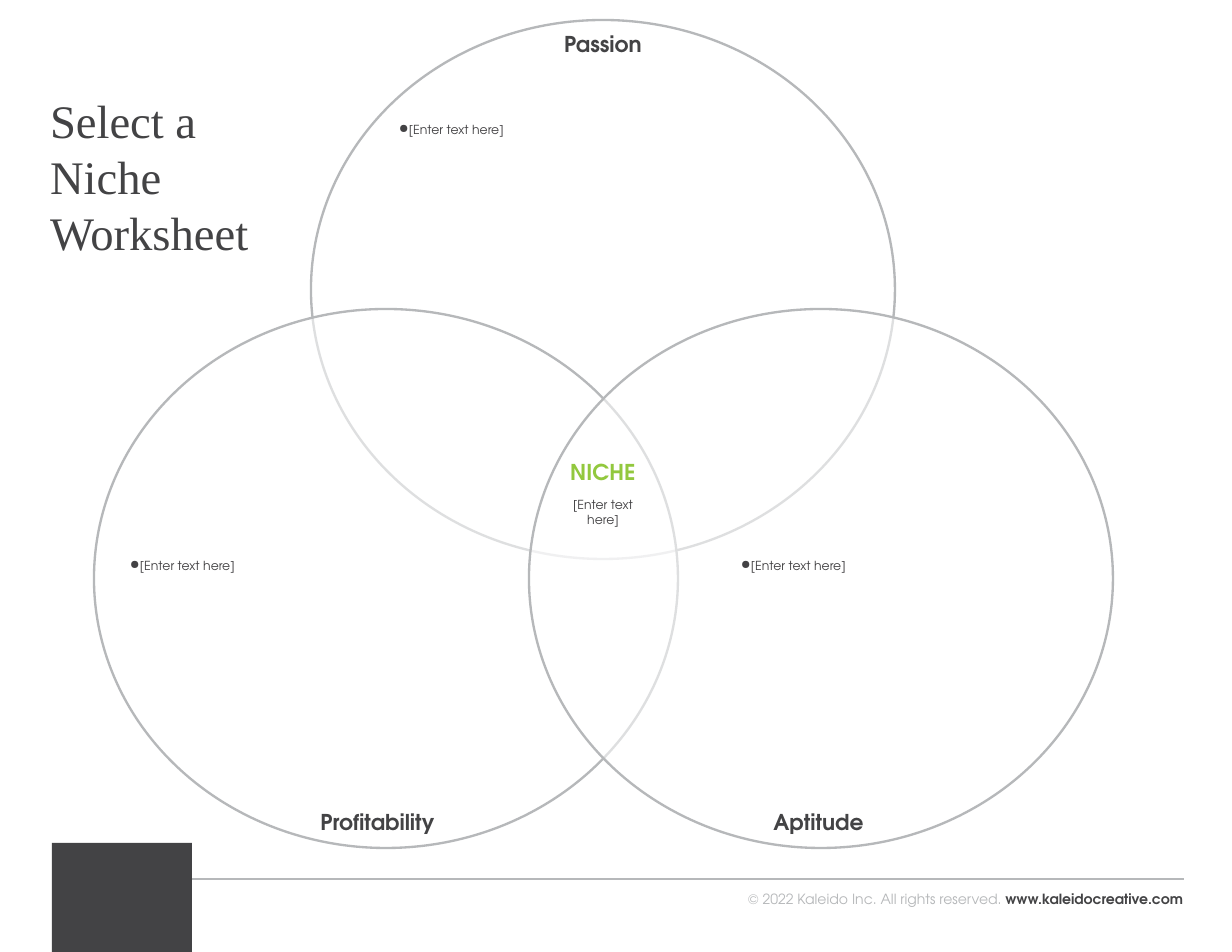
from collections import namedtuple
from dataclasses import dataclass

from lxml import etree
from pptx import Presentation
from pptx.dml.color import RGBColor
from pptx.enum.shapes import MSO_CONNECTOR as Connector, MSO_SHAPE as Preset
from pptx.enum.text import MSO_ANCHOR as Anchor, MSO_AUTO_SIZE as AutoSize, PP_ALIGN as Align
from pptx.oxml.ns import qn
from pptx.util import Emu, Pt

Box = namedtuple("Box", "left top width height")
Circle = namedtuple("Circle", "name box label note")


@dataclass(frozen=True)
class Theme:
    dark: str = "434345"
    body: str = "434244"
    grey: str = "B6B8BA"
    green: str = "92C83E"
    white: str = "FFFFFF"
    sans: str = "TeX Gyre Adventor"
    serif: str = "Times New Roman"
    title_size: int = 30
    label_size: int = 14
    footer_size: int = 9
    note_size: int = 8


THEME = Theme()
PLACEHOLDER_TEXT = "[Enter text here]"
CIRCLE_WIDTH, CIRCLE_HEIGHT = 584, 539
CIRCLES = [
    Circle("Passion", Box(311, 20, CIRCLE_WIDTH, CIRCLE_HEIGHT),
           Box(231, -11, 122, 69), Box(77, 95, 431, 38)),
    Circle("Profitability", Box(94, 309, CIRCLE_WIDTH, CIRCLE_HEIGHT),
           Box(195, 478, 177, 69), Box(25, 242, 356, 38)),
    Circle("Aptitude", Box(529, 309, CIRCLE_WIDTH, CIRCLE_HEIGHT),
           Box(206, 478, 167, 69), Box(201, 242, 356, 38)),
]


def px(value):
    return Emu(round(value * 914400 / 112))


def place(box):
    return [px(value) for value in box]


def inside(outer, inner):
    return inner._replace(left=outer.left + inner.left, top=outer.top + inner.top)


def color(value):
    return RGBColor.from_string(value)


def set_font(font, size, value, name=THEME.sans, bold=False):
    font.name, font.size, font.bold = name, Pt(size), bold
    font.color.rgb = color(value)


def set_frame(frame, margins, anchor=Anchor.TOP):
    frame.word_wrap = True
    frame.auto_size = AutoSize.NONE
    frame.vertical_anchor = anchor
    (frame.margin_left, frame.margin_top,
     frame.margin_right, frame.margin_bottom) = place(margins)


def add_text(slide, box, text, size, value, bold=False, align=Align.CENTER, anchor=Anchor.TOP):
    frame = slide.shapes.add_textbox(*place(box)).text_frame
    set_frame(frame, (11, 11, 11, 11), anchor)
    paragraph = frame.paragraphs[0]
    paragraph.text = text
    paragraph.alignment = align
    set_font(paragraph.font, size, value, bold=bold)
    return frame


def add_label(slide, box, text, value=THEME.dark):
    add_text(slide, box, text, THEME.label_size, value, bold=True, anchor=Anchor.MIDDLE)


def add_note(slide, box, bulleted):
    align = Align.LEFT if bulleted else Align.CENTER
    frame = add_text(slide, box, PLACEHOLDER_TEXT, THEME.note_size, THEME.body, align=align)
    frame.auto_size = AutoSize.SHAPE_TO_FIT_TEXT
    if bulleted:
        properties = frame.paragraphs[0]._p.get_or_add_pPr()
        properties.set("marL", str(px(7)))
        properties.set("indent", str(px(-13)))
        bullet_color = etree.Element(qn("a:buClr"))
        etree.SubElement(bullet_color, qn("a:srgbClr"), val=THEME.body)
        properties.insert(0, bullet_color)
        properties.insert(1, etree.Element(qn("a:buChar"), char="●"))


def add_circle(slide, box):
    shape = slide.shapes.add_shape(Preset.OVAL, *place(box))
    shape.shadow.inherit = False
    shape.fill.solid()
    shape.fill.fore_color.rgb = color(THEME.white)
    fill_color = shape.fill._xPr.find(qn("a:solidFill"))[0]
    etree.SubElement(fill_color, qn("a:alpha"), val="56000")
    shape.line.color.rgb = color(THEME.grey)
    shape.line.width = Pt(1.5)


def add_title(slide, box):
    title = slide.shapes.title
    title.left, title.top, title.width, title.height = place(box)
    set_frame(title.text_frame, (0, 7, 13, 7))
    paragraph = title.text_frame.paragraphs[0]
    paragraph.text = "Select a \vNiche \vWorksheet"
    paragraph.alignment = Align.LEFT
    paragraph.line_spacing = Pt(36)
    set_font(paragraph.font, THEME.title_size, THEME.dark, THEME.serif)


def add_footer(slide, box):
    rule_top = box.top + 36
    rule = slide.shapes.add_connector(
        Connector.STRAIGHT, px(box.left + box.width), px(rule_top),
        px(box.left + 134), px(rule_top))
    rule.line.color.rgb = color(THEME.grey)
    rule.line.width = Pt(0.75)
    etree.SubElement(rule._element.spPr, qn("a:effectLst"))

    credit = slide.shapes.add_textbox(*place(inside(box, Box(535, 40, 596, 43))))
    set_frame(credit.text_frame, (13, 7, 0, 7))
    paragraph = credit.text_frame.paragraphs[0]
    paragraph.alignment = Align.RIGHT
    for text, value, bold in [
        ("© 2022 Kaleido Inc. All rights reserved. ", THEME.grey, False),
        ("www.kaleidocreative.com", THEME.dark, True),
    ]:
        run = paragraph.add_run()
        run.text = text
        set_font(run.font, THEME.footer_size, value, bold=bold)

    block = slide.shapes.add_shape(Preset.RECTANGLE, *place(inside(box, Box(0, 0, 140, box.height))))
    block.shadow.inherit = False
    block.fill.solid()
    block.fill.fore_color.rgb = color(THEME.dark)
    block.line.fill.background()


def add_niche(slide, box):
    add_label(slide, inside(box, Box(0, 0, 112, 53)), "NICHE", THEME.green)
    add_note(slide, inside(box, Box(4, 41, 104, 53)), bulleted=False)


def add_venn(slide):
    for circle in CIRCLES:
        add_circle(slide, circle.box)
    add_niche(slide, Box(547, 445, 112, 94))
    for circle in CIRCLES:
        add_label(slide, inside(circle.box, circle.label), circle.name)
        add_note(slide, inside(circle.box, circle.note), bulleted=True)


def main():
    presentation = Presentation()
    presentation.slide_width, presentation.slide_height = px(1232), px(952)
    slide = presentation.slides.add_slide(presentation.slide_layouts[5])
    add_title(slide, Box(50, 85, 254, 193))
    add_footer(slide, Box(52, 843, 1132, 109))
    add_venn(slide)
    presentation.save("out.pptx")


if __name__ == "__main__":
    main()
